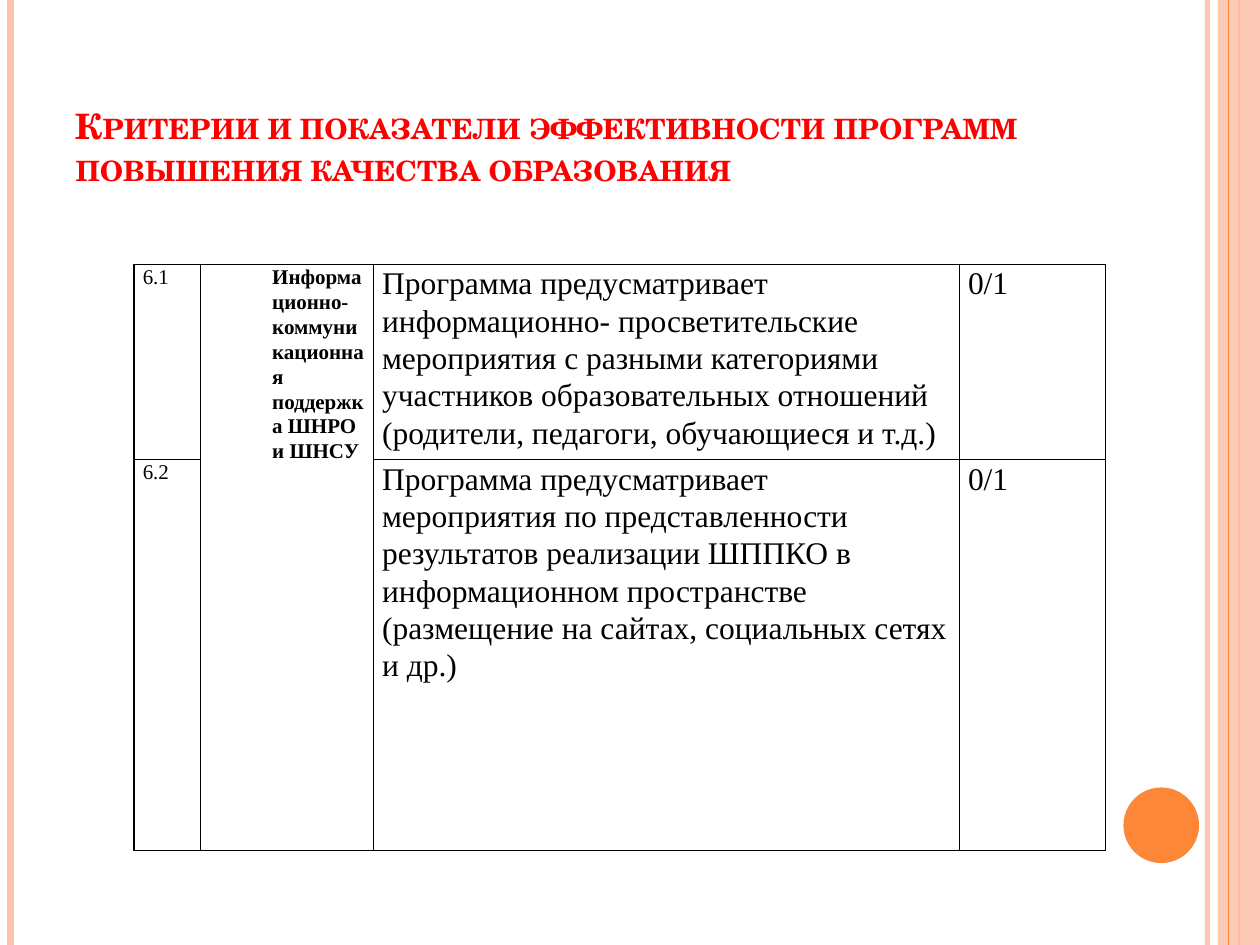
from dataclasses import dataclass

from lxml import etree
from pptx import Presentation
from pptx.dml.color import RGBColor
from pptx.enum.shapes import MSO_CONNECTOR, MSO_SHAPE
from pptx.enum.text import MSO_ANCHOR, MSO_AUTO_SIZE, PP_ALIGN
from pptx.oxml.ns import qn
from pptx.util import Pt

STRAIGHT = MSO_CONNECTOR.STRAIGHT
RECTANGLE, OVAL = MSO_SHAPE.RECTANGLE, MSO_SHAPE.OVAL
BOTTOM, LEFT = MSO_ANCHOR.BOTTOM, PP_ALIGN.LEFT
NO_AUTOFIT = MSO_AUTO_SIZE.NONE

WIDTH, HEIGHT = 720, 540
PINK, ORANGE, RED, BLACK = "FEC3AE", "FE8637", "FF0000", "000000"
SERIF = "Times New Roman"

COLUMN_WIDTHS = (38, 98.8, 334.8, 83.6)
ROW_HEIGHTS = (111.6, 223.2)
TABLE_LEFT, TABLE_TOP = 76.6, 151
OUTER_BORDER, INNER_BORDER = 1, 0.5


@dataclass
class Rail:
    x: float
    color: str
    width: float
    opacity: int = 100


@dataclass
class Ornament:
    preset: int
    box: tuple
    color: str
    opacity: int = 100


@dataclass
class Entry:
    row: int
    column: int
    text: str
    size: float
    bold: bool = False
    indent: float = 0


DECORATION = (
    Rail(690, PINK, 3, 93),
    Rail(6, PINK, 4.5),
    Rail(708, ORANGE, 1.5),
    Ornament(RECTANGLE, (696, 0, 24, HEIGHT), PINK, 87),
    Rail(702, ORANGE, 0.75),
    Ornament(OVAL, (642, 450, 43.2, 43.2), ORANGE),
)

ENTRIES = (
    Entry(0, 0, "6.1", 12),
    Entry(0, 1, "Информационно-коммуникационная поддержка ШНРО и ШНСУ",
          12, bold=True, indent=36),
    Entry(0, 2, "Программа предусматривает информационно- просветительские "
          "мероприятия с разными категориями участников образовательных "
          "отношений (родители, педагоги, обучающиеся и т.д.)", 18),
    Entry(0, 3, "0/1", 18),
    Entry(1, 0, "6.2", 12),
    Entry(1, 2, "Программа предусматривает мероприятия по представленности "
          "результатов реализации ШППКО в информационном пространстве "
          "(размещение на сайтах, социальных сетях и др.)", 18),
    Entry(1, 3, "0/1", 18),
)


def rgb(color: str) -> RGBColor:
    return RGBColor.from_string(color)


def apply_format(target, values: dict) -> None:
    for name, value in values.items():
        setattr(target, name, value)


def set_opacity(shape, percent: int) -> None:
    if percent < 100:
        color = next(shape.element.spPr.iter(qn("a:srgbClr")))
        etree.SubElement(color, qn("a:alpha"), val=str(percent * 1000))


def draw_rail(slide, rail: Rail) -> None:
    line = slide.shapes.add_connector(
        STRAIGHT, Pt(rail.x), Pt(0), Pt(rail.x), Pt(HEIGHT))
    line.line.color.rgb = rgb(rail.color)
    line.line.width = Pt(rail.width)
    set_opacity(line, rail.opacity)
    etree.SubElement(line.element.spPr, qn("a:effectLst"))


def draw_ornament(slide, ornament: Ornament) -> None:
    shape = slide.shapes.add_shape(ornament.preset, *map(Pt, ornament.box))
    shape.shadow.inherit = False
    shape.fill.solid()
    shape.fill.fore_color.rgb = rgb(ornament.color)
    shape.line.fill.background()
    set_opacity(shape, ornament.opacity)


def write_title(slide, text: str) -> None:
    title = slide.shapes.title
    apply_format(title, {"left": Pt(36), "top": Pt(21.6),
                         "width": Pt(624), "height": Pt(90)})
    apply_format(title.text_frame, {"text": text, "word_wrap": True,
                                    "auto_size": NO_AUTOFIT,
                                    "vertical_anchor": BOTTOM})
    paragraph = title.text_frame.paragraphs[0]
    paragraph.alignment = LEFT
    font = paragraph.runs[0].font
    apply_format(font, {"name": "TeX Gyre Schola", "size": Pt(20), "bold": True})
    font.color.rgb = rgb(RED)
    paragraph.runs[0]._r.get_or_add_rPr().set("cap", "small")


def set_borders(cell, widths: dict) -> None:
    properties = cell._tc.get_or_add_tcPr()
    for side, width in widths.items():
        border = etree.SubElement(properties, qn(f"a:ln{side}"), w=str(Pt(width)))
        fill = etree.SubElement(border, qn("a:solidFill"))
        etree.SubElement(fill, qn("a:srgbClr"), val=BLACK)


def write_entry(cell, entry: Entry) -> None:
    cell.text = entry.text
    paragraph = cell.text_frame.paragraphs[0]
    paragraph.line_spacing = 1.07
    if entry.indent:
        paragraph._p.get_or_add_pPr().set("marL", str(Pt(entry.indent)))
    font = paragraph.runs[0].font
    apply_format(font, {"name": SERIF, "size": Pt(entry.size), "bold": entry.bold})
    font.color.rgb = rgb(BLACK)


def draw_criteria(slide) -> None:
    rows, columns = len(ROW_HEIGHTS), len(COLUMN_WIDTHS)
    criteria = slide.shapes.add_table(
        rows, columns, Pt(TABLE_LEFT), Pt(TABLE_TOP),
        Pt(sum(COLUMN_WIDTHS)), Pt(sum(ROW_HEIGHTS))).table
    apply_format(criteria, {"first_row": False, "horz_banding": False})
    for column, width in zip(criteria.columns, COLUMN_WIDTHS):
        column.width = Pt(width)
    for row, height in zip(criteria.rows, ROW_HEIGHTS):
        row.height = Pt(height)

    # The support direction covers both criteria
    criteria.cell(0, 1).merge(criteria.cell(1, 1))
    for r in range(rows):
        for c in range(columns):
            cell = criteria.cell(r, c)
            apply_format(cell, {"margin_left": Pt(5), "margin_right": Pt(5),
                                "margin_top": 0, "margin_bottom": 0})
            set_borders(cell, {
                "L": INNER_BORDER if c else OUTER_BORDER,
                "R": INNER_BORDER if c < columns - 1 else OUTER_BORDER,
                "T": INNER_BORDER if r else OUTER_BORDER,
                "B": INNER_BORDER,
            })
            cell.fill.background()
    for entry in ENTRIES:
        write_entry(criteria.cell(entry.row, entry.column), entry)


def main() -> None:
    deck = Presentation()
    deck.slide_width, deck.slide_height = Pt(WIDTH), Pt(HEIGHT)
    slide = deck.slides.add_slide(deck.slide_layouts[5])

    # Side rails, band and circle
    for part in DECORATION:
        if isinstance(part, Rail):
            draw_rail(slide, part)
        else:
            draw_ornament(slide, part)

    # Heading and criteria
    write_title(slide, "Критерии и показатели эффективности программ "
                       "повышения качества образования")
    draw_criteria(slide)
    deck.save("out.pptx")


if __name__ == "__main__":
    main()
